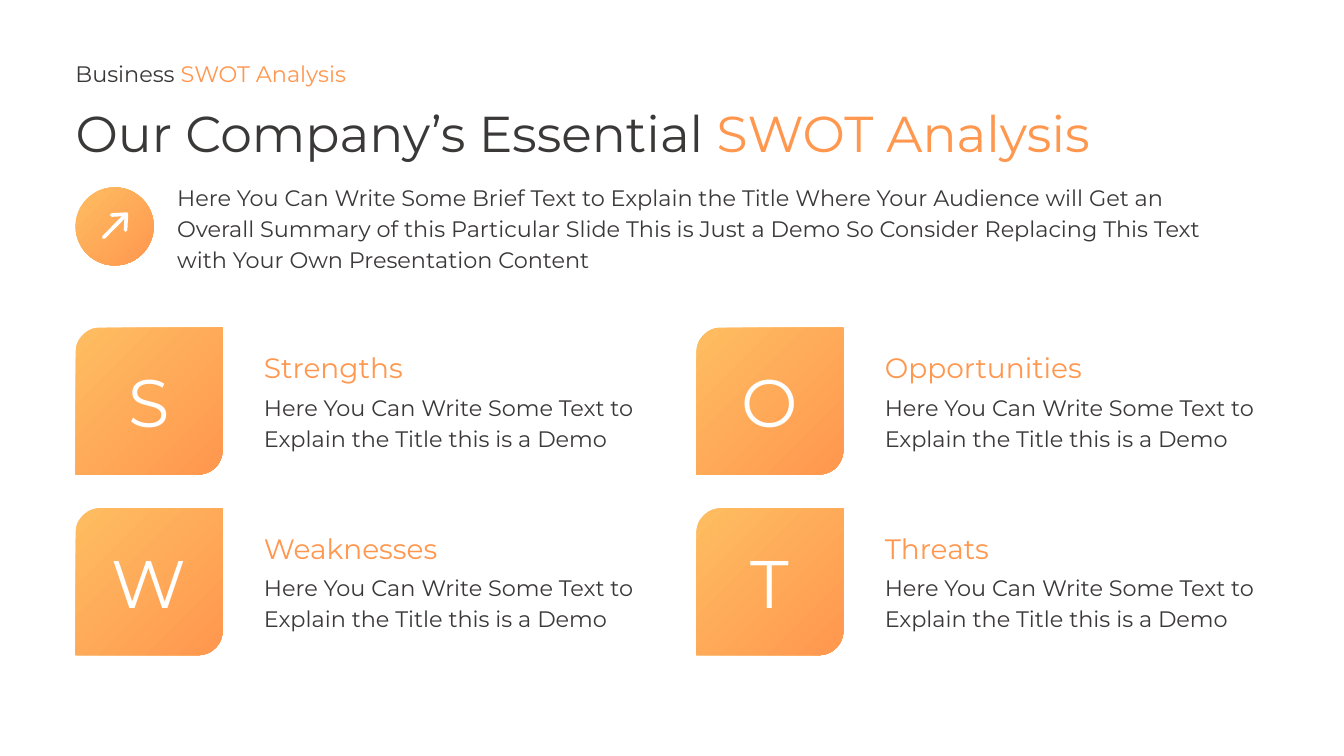
import pptx
import pptx.util
import pptx.dml.color
import pptx.enum.shapes
import pptx.enum.text
import pptx.oxml
import pptx.oxml.ns

SHAPE = pptx.enum.shapes.MSO_SHAPE
ANCHOR = pptx.enum.text.MSO_ANCHOR
ALIGN = pptx.enum.text.PP_ALIGN
COLORS = {"ink": "3B3838", "orange": "FF974F", "yellow": "FEBD61", "white": "FFFFFF"}
FONT = "Montserrat"
COLS, ROWS = 160, 90


def rgb(name):
    return pptx.dml.color.RGBColor.from_string(COLORS[name])


class SwotSlide:
    """Places elements on one slide, in columns and rows of a 160 by 90 grid."""

    def __init__(self, prs, layout):
        self.col = prs.slide_width / COLS
        self.row = prs.slide_height / ROWS
        self.s = prs.slides.add_slide(layout)

    def point(self, x, y):
        return round(x * self.col), round(y * self.row)

    def box(self, x, y, w, h):
        return self.point(x, y) + self.point(w, h)

    def set_text(self, sp, lines, size, spacing=None, align=ALIGN.LEFT, anchor=ANCHOR.TOP):
        """Fill a shape with lines, each a list of (text, colour) runs."""
        tf = sp.text_frame
        tf.word_wrap = True
        tf.auto_size = pptx.enum.text.MSO_AUTO_SIZE.NONE
        tf.vertical_anchor = anchor
        for i, runs in enumerate(lines):
            p = tf.add_paragraph() if i else tf.paragraphs[0]
            p.alignment = align
            p.space_before = pptx.util.Pt(0)
            if spacing:
                p.line_spacing = pptx.util.Pt(spacing)
            p.font.name = FONT
            p.font.size = pptx.util.Pt(size)
            same_color = len({color for _, color in runs}) == 1
            if same_color:
                p.font.color.rgb = rgb(runs[0][1])
            for text, color in runs:
                r = p.add_run()
                r.text = text
                if not same_color:
                    r.font.color.rgb = rgb(color)

    def text(self, place, lines, size, spacing=None):
        sp = self.s.shapes.add_textbox(*self.box(*place))
        self.set_text(sp, lines, size, spacing)

    def placeholder(self, idx, place, lines, size, spacing=None):
        sp = self.s.placeholders[idx]
        sp.left, sp.top, sp.width, sp.height = self.box(*place)
        self.set_text(sp, lines, size, spacing)
        for p in sp.text_frame.paragraphs:
            pPr = p._p.get_or_add_pPr()
            pPr.set("marL", "0")
            pPr.set("indent", "0")
            no_bullet = pptx.oxml.parse_xml(
                f'<a:buNone {pptx.oxml.ns.nsdecls("a")}/>')
            pPr.find(pptx.oxml.ns.qn("a:defRPr")).addprevious(no_bullet)

    def glow_shape(self, kind, place):
        """Add a shape whose gradient spreads from the bottom right corner."""
        sp = self.s.shapes.add_shape(kind, *self.box(*place))
        sp.shadow.inherit = False
        sp.line.fill.background()
        sp.fill.gradient()
        for stop, color, position in zip(sp.fill.gradient_stops, ("orange", "yellow"), (0, 1)):
            stop.color.rgb = rgb(color)
            stop.position = position
        grad = sp._element.spPr.find(pptx.oxml.ns.qn("a:gradFill"))
        grad.remove(grad.find(pptx.oxml.ns.qn("a:lin")))
        grad.append(pptx.oxml.parse_xml(
            f'<a:path {pptx.oxml.ns.nsdecls("a")} path="circle">'
            '<a:fillToRect l="100000" t="100000"/></a:path>'))
        return sp

    def tile(self, place, letter):
        sp = self.glow_shape(SHAPE.ROUND_2_DIAG_RECTANGLE, place)
        self.set_text(sp, [[(letter, "white")]], 48, align=ALIGN.CENTER, anchor=ANCHOR.MIDDLE)
        tf = sp.text_frame
        tf.margin_left = tf.margin_right = tf.margin_top = tf.margin_bottom = 0

    def stroke(self, *lines, width):
        """Draw white open lines with round ends as one outline."""
        builder = self.s.shapes.build_freeform(*self.point(*lines[0][0]))
        for i, line in enumerate(lines):
            points = [self.point(*xy) for xy in line]
            if i:
                builder.move_to(*points[0])
            builder.add_line_segments(points[1:], close=False)
        sp = builder.convert_to_shape()
        sp.shadow.inherit = False
        sp.fill.background()
        sp.line.color.rgb = rgb("white")
        sp.line.width = pptx.util.Pt(width)
        ln = sp._element.spPr.find(pptx.oxml.ns.qn("a:ln"))
        ln.set("cap", "rnd")
        ln.append(pptx.oxml.parse_xml(f'<a:round {pptx.oxml.ns.nsdecls("a")}/>'))


INTRO = [
    "Here You Can Write Some Brief Text to Explain the Title Where Your Audience will Get an",
    "Overall Summary of this Particular Slide This is Just a Demo So Consider Replacing This Text",
    "with Your Own Presentation Content",
]
DETAIL = ["Here You Can Write Some Text to", "Explain the Title this is a Demo"]
SWOT = ["Strengths", "Opportunities", "Weaknesses", "Threats"]


def plain(lines, color="ink"):
    return [[(line, color)] for line in lines]


def main():
    prs = pptx.Presentation()
    prs.slide_width = pptx.util.Inches(13.33)
    prs.slide_height = pptx.util.Inches(7.5)
    slide = SwotSlide(prs, prs.slide_layouts[1])

    slide.text((7.8, 6.6, 40, 4.4), [[("Business ", "ink"), ("SWOT Analysis", "orange")]], 16)
    slide.placeholder(0, (7.8, 11.5, 136, 8.5),
                      [[("Our Company’s Essential ", "ink"), ("SWOT Analysis", "orange")]], 36)
    slide.placeholder(1, (19.9, 20.9, 130, 12), plain(INTRO), 16, 22)

    slide.glow_shape(SHAPE.OVAL, (9, 22.3, 9.3, 9.3))
    slide.stroke([(13.3, 25.6), (15.05, 25.5), (14.95, 27.4)],
                 [(12.35, 28.25), (15.05, 25.5)], width=2.6)

    for i, heading in enumerate(SWOT):
        x = 9 + 73.9 * (i % 2)
        y = 39 + 21.5 * (i // 2)
        slide.tile((x, y, 17.5, 17.5), heading[0])
        slide.text((x + 21.25, y + 2.15, 49.8, 5.3), plain([heading], "orange"), 20)
        slide.text((x + 21.25, y + 6.85, 49.8, 8.4), plain(DETAIL), 16, 22)

    prs.save("out.pptx")


if __name__ == "__main__":
    main()
